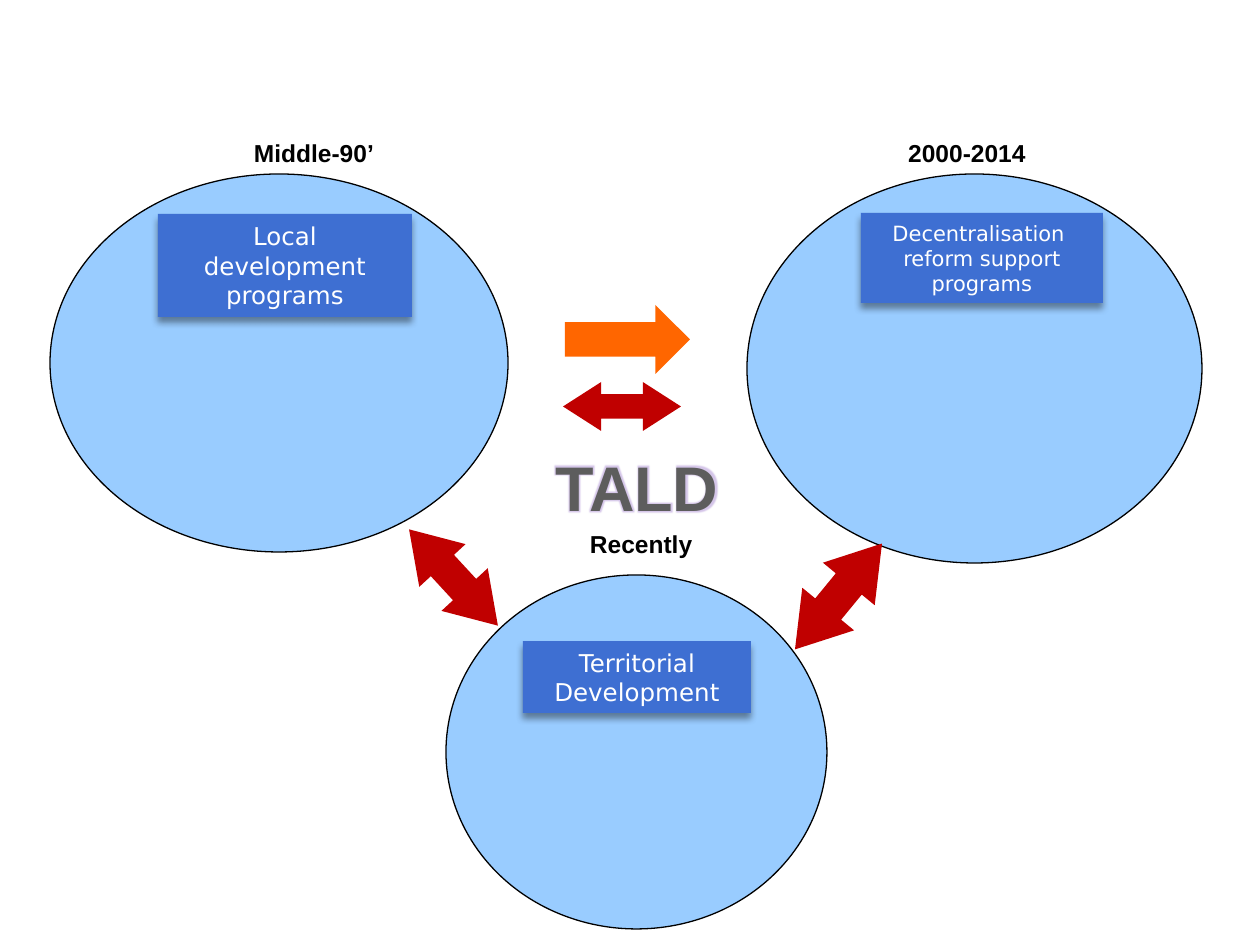
from lxml import etree
from pptx import Presentation
from pptx import util as u
from pptx.dml.color import RGBColor
from pptx.enum import shapes, text
from pptx.oxml import ns

PX = 914400 / 126
SKY = RGBColor(0x99, 0xCC, 0xFF)
BLUE = RGBColor(0x3E, 0x6F, 0xD2)
ORANGE = RGBColor(0xFF, 0x66, 0x00)
RED = RGBColor(0xC0, 0x00, 0x00)
GREY = RGBColor(0x5D, 0x5D, 0x5D)
PURPLE = RGBColor(0xB9, 0x9F, 0xDB)
BLACK = RGBColor(0, 0, 0)
WHITE = RGBColor(255, 255, 255)
SHAPE = shapes.MSO_SHAPE


def px(*lengths):
    return [u.Emu(round(n * PX)) for n in lengths]


def effect(tag, color, alpha, **attrs):
    effects = etree.Element(ns.qn("a:effectLst"))
    item = etree.SubElement(effects, ns.qn(tag), {k: str(v) for k, v in attrs.items()})
    clr = etree.SubElement(item, ns.qn("a:srgbClr"), val=str(color))
    etree.SubElement(clr, ns.qn("a:alpha"), val=str(alpha * 1000))
    return effects


class Diagram:
    label_font = "Arial"
    box_font = "DejaVu Sans"

    def __init__(self, slide):
        self.slide = slide

    def group(self):
        return self.slide.shapes.add_group_shape().shapes

    def shape(self, parent, kind, box, fill, line=None):
        sp = parent.add_shape(kind, *px(*box))
        sp.shadow.inherit = False
        sp.fill.solid()
        sp.fill.fore_color.rgb = fill
        if line is None:
            sp.line.fill.background()
        else:
            sp.line.color.rgb = line
            sp.line.width = u.Pt(0.75)
        return sp

    def set_text(self, sp, words, size, font, color, bold=False):
        tf = sp.text_frame
        tf.text = words
        for p in tf.paragraphs:
            p.alignment = text.PP_ALIGN.CENTER
            for r in p.runs:
                r.font.size = u.Pt(size)
                r.font.name = font
                r.font.bold = bold
                r.font.color.rgb = color

    def banner(self, parent, box, words, size):
        sp = self.shape(parent, SHAPE.RECTANGLE, box, BLUE)
        props = sp._element.spPr
        props.remove(props.find(ns.qn("a:effectLst")))
        props.append(effect("a:outerShdw", BLACK, 40, blurRad=50800, dist=38100,
                            dir=5400000, rotWithShape=0))
        sp.text_frame.word_wrap = True
        self.set_text(sp, words, size, self.box_font, WHITE)

    def label(self, parent, box, words, size=14, color=BLACK, wrap=False):
        sp = parent.add_textbox(*px(*box))
        sp.text_frame.word_wrap = wrap
        self.set_text(sp, words, size, self.label_font, color, bold=True)
        return sp

    def phase(self, circle, box, words, size, label_box, period):
        g = self.group()
        self.shape(g, SHAPE.OVAL, circle, SKY, BLACK)
        self.banner(g, box, words, size)
        self.label(g, label_box, period)

    def double_arrow(self, parent, box, angle):
        sp = self.shape(parent, SHAPE.LEFT_RIGHT_ARROW, box, RED)
        sp.adjustments[0] = 0.5
        sp.adjustments[1] = 0.78
        sp.rotation = angle

    def glowing_label(self, box, words, size):
        sp = self.label(self.slide.shapes, box, words, size, GREY, wrap=True)
        r = sp.text_frame.paragraphs[0].runs[0]
        fill = r.font._element.find(ns.qn("a:solidFill"))
        fill.addnext(effect("a:glow", PURPLE, 60, rad=50800))


def main():
    prs = Presentation()
    prs.slide_width, prs.slide_height = u.Inches(10), u.Inches(7.5)
    s = prs.slides.add_slide(prs.slide_layouts[6])
    d = Diagram(s)

    d.phase((50, 174, 458, 378), (158, 214, 254, 103),
            "Local development programs", 14, (241, 132, 146, 43), "Middle-90’")
    d.phase((747, 174, 455, 389), (861, 213, 242, 90),
            "Decentralisation \nreform support programs", 12, (895, 132, 144, 43), "2000-2014")
    d.phase((446, 575, 381, 354), (523, 641, 228, 72),
            "Territorial Development", 14, (577, 523, 135, 43), "Recently ")

    d.shape(s.shapes, SHAPE.RIGHT_ARROW, (565, 305, 125, 69), ORANGE)
    links = d.group()
    for box, angle in (((388, 546, 131, 63), 227.3),
                       ((770, 563, 137, 67), 309.4),
                       ((563, 382, 118, 49), 180)):
        d.double_arrow(links, box, angle)
    d.glowing_label((541, 442, 192, 89), "TALD", 36)

    prs.save("out.pptx")


if __name__ == "__main__":
    main()
